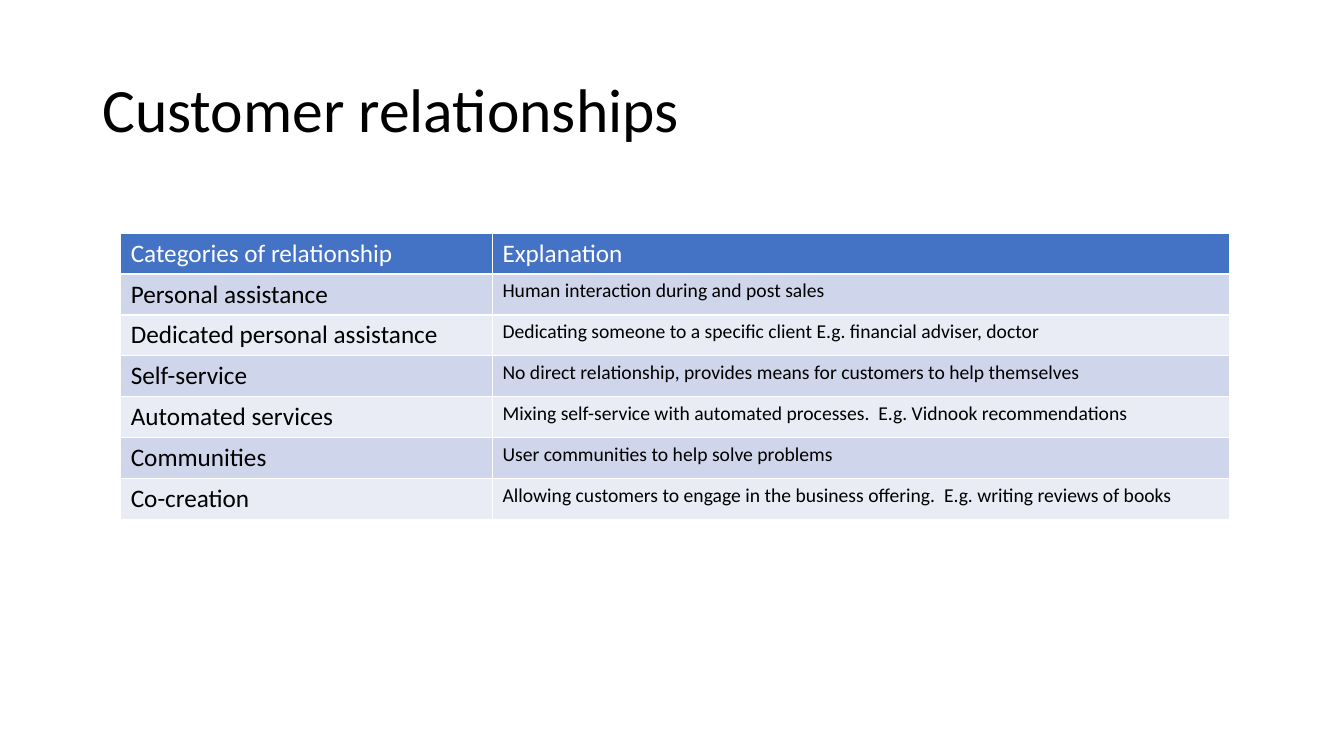
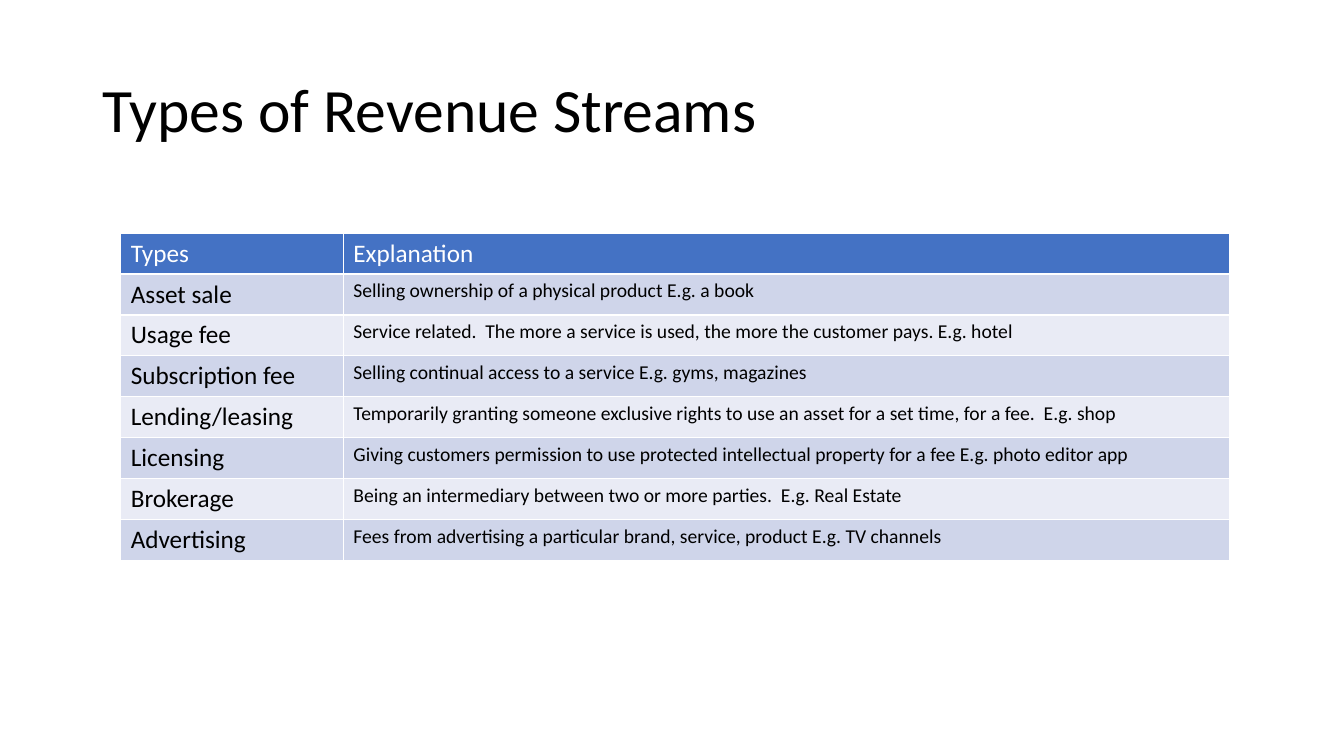
"""Build two table slides on customer relationships and revenue streams."""
from dataclasses import dataclass

from lxml.etree import SubElement
from pptx import Presentation
from pptx.dml.color import RGBColor
from pptx.enum.text import MSO_ANCHOR
from pptx.oxml.ns import qn
from pptx.util import Pt

PX = 9525


@dataclass(frozen=True)
class Theme:
    font: str = "Calibri"
    ink: str = "000000"
    white: str = "FFFFFF"
    head: str = "4472C4"
    bands: tuple = ("E9EBF5", "CFD5EA")
    title: int = 44
    label: int = 18
    note: int = 14
    rule: int = 1


THEME = Theme()
LEFT, TOP, WIDE, ROW = 115, 222, 1056, 39

PAGES = [
    ("Customer relationships", 354, [
        ("Categories of relationship", "Explanation"),
        ("Personal assistance", "Human interaction during and post sales"),
        ("Dedicated personal assistance",
         "Dedicating someone to a specific client E.g. financial adviser, doctor"),
        ("Self-service",
         "No direct relationship, provides means for customers to help themselves"),
        ("Automated services",
         "Mixing self-service with automated processes.  E.g. Vidnook recommendations"),
        ("Communities", "User communities to help solve problems"),
        ("Co-creation",
         "Allowing customers to engage in the business offering.  E.g. writing reviews of books"),
    ]),
    ("Types of Revenue Streams", 212, [
        ("Types", "Explanation"),
        ("Asset sale", "Selling ownership of a physical product E.g. a book"),
        ("Usage fee",
         "Service related.  The more a service is used, the more the customer pays. E.g. hotel"),
        ("Subscription fee", "Selling continual access to a service E.g. gyms, magazines"),
        ("Lending/leasing",
         "Temporarily granting someone exclusive rights to use an asset for a set time, "
         "for a fee.  E.g. shop"),
        ("Licensing",
         "Giving customers permission to use protected intellectual property for a fee "
         "E.g. photo editor app"),
        ("Brokerage", "Being an intermediary between two or more parties.  E.g. Real Estate"),
        ("Advertising",
         "Fees from advertising a particular brand, service, product E.g. TV channels"),
    ]),
]


def write(frame, text, size, color):
    run = frame.paragraphs[0].add_run()
    run.text = text
    form = {"name": THEME.font, "size": Pt(size), "bold": False}
    for key, value in form.items():
        setattr(run.font, key, value)
    run.font.color.rgb = RGBColor.from_string(color)


def paint(cell, color):
    props = cell._tc.get_or_add_tcPr()
    for side in ("lnL", "lnR", "lnT", "lnB"):
        line = SubElement(props, qn(f"a:{side}"), w=str(Pt(THEME.rule)))
        fill = SubElement(line, qn("a:solidFill"))
        SubElement(fill, qn("a:srgbClr"), val=THEME.white)
    cell.fill.solid()
    cell.fill.fore_color.rgb = RGBColor.from_string(color)


deck = Presentation()
deck.slide_width, deck.slide_height = 1280 * PX, 720 * PX

for title, first, rows in PAGES:
    slide = deck.slides.add_slide(deck.slide_layouts[6])
    box = slide.shapes.add_textbox(88 * PX, 38 * PX, 1104 * PX, 139 * PX)
    frame = box.text_frame
    form = {"word_wrap": True, "vertical_anchor": MSO_ANCHOR.MIDDLE}
    for key, value in form.items():
        setattr(frame, key, value)
    frame.paragraphs[0].line_spacing = 0.9
    write(frame, title, THEME.title, THEME.ink)

    grid = slide.shapes.add_table(
        len(rows), 2, LEFT * PX, TOP * PX, WIDE * PX, ROW * len(rows) * PX).table
    for col, width in zip(grid.columns, (first, WIDE - first)):
        col.width = width * PX
    for r, texts in enumerate(rows):
        grid.rows[r].height = ROW * PX
        for c, text in enumerate(texts):
            cell = grid.cell(r, c)
            paint(cell, THEME.bands[r % 2] if r else THEME.head)
            size = THEME.note if r and c else THEME.label
            write(cell.text_frame, text, size, THEME.ink if r else THEME.white)

deck.save("out.pptx")
